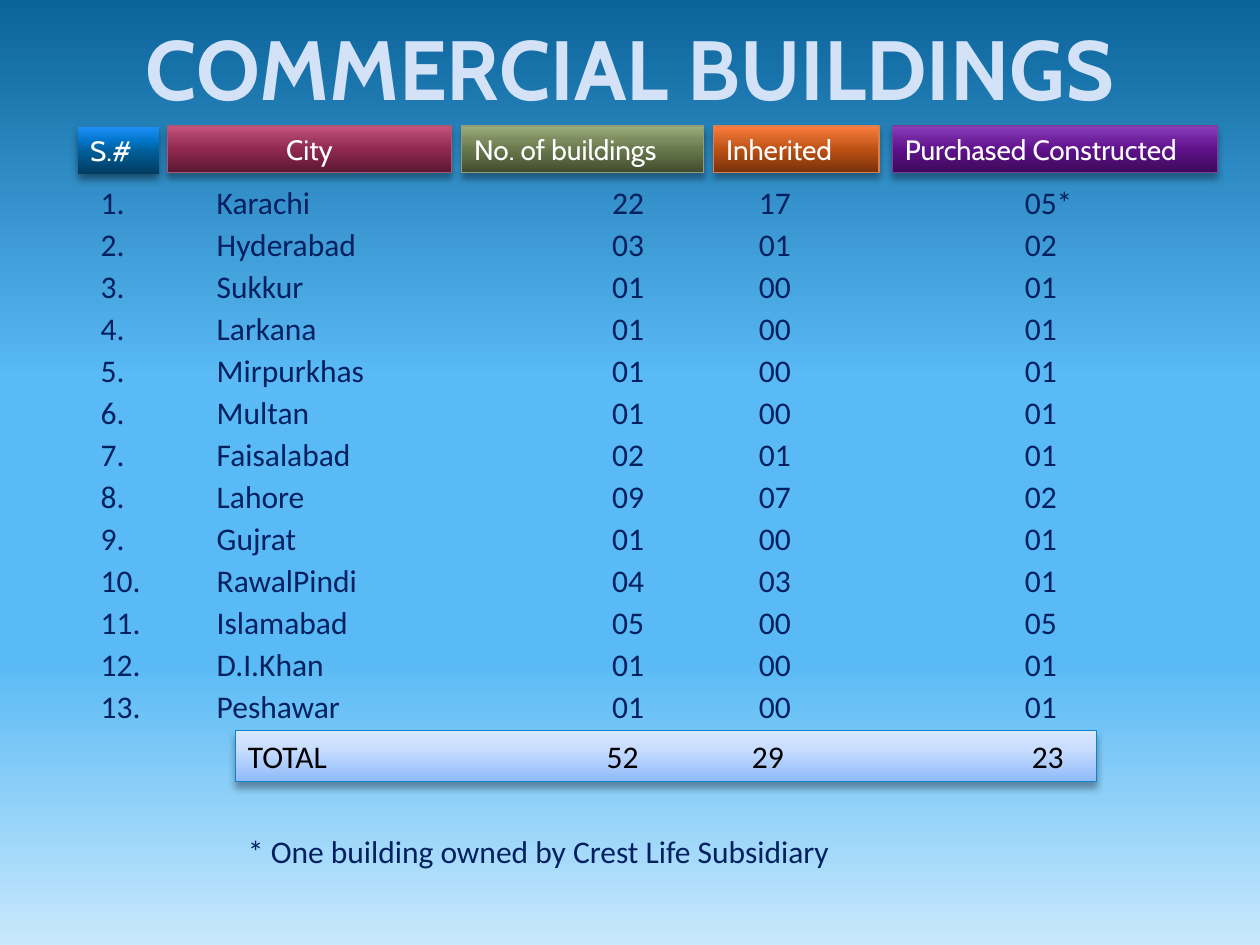
from lxml.etree import SubElement
from pptx import Presentation
from pptx.dml.color import RGBColor
from pptx.enum.shapes import MSO_SHAPE as Preset
from pptx.enum.text import MSO_ANCHOR as Anchor, MSO_AUTO_SIZE as AutoSize, PP_ALIGN as Align
from pptx.oxml.ns import qn
from pptx.util import Cm, Pt

COLORS = {"title": "D4E2F8", "row": "002060", "header": "FFFFFF", "total": "000000",
          "shadow": "000000", "total_line": "0D84CD"}

# Gradient stops run from top to bottom
BACKGROUND = [(0, "0A639A"), (40, "5ABAF5"), (70, "5ABAF5"), (100, "C8E8FC")]
TOTAL_FILL = [(0, "D9E7FF"), (35, "C9DEFF"), (100, "90BBF9")]
HEADER_STOPS = (0, 30, 50, 100)

# Text, left, top, width, alignment, line colour, shadow (opacity, blur), fill colours
HEADERS = [
    ("S.#", 1.57, 2.57, 1.63, Align.LEFT, None, (45, 5),
     ("1C8FF6", "0074C8", "005F9A", "003B60")),
    ("City", 3.38, 2.54, 5.72, Align.CENTER, "AD5778", (35, 4),
     ("C6537D", "A33961", "902850", "5B1731")),
    ("No. of buildings", 9.31, 2.54, 4.88, Align.LEFT, "919E7A", (35, 4),
     ("9BAD7B", "7C8C5F", "69794D", "414C2F")),
    ("Inherited", 14.39, 2.54, 3.33, Align.LEFT, "DA804E", (35, 4),
     ("FE7E3F", "D46326", "BD5114", "78310A")),
    ("Purchased Constructed", 17.99, 2.54, 6.55, Align.LEFT, "7D3DA1", (35, 4),
     ("8B3FBD", "6F229C", "5F128B", "3C0958")),
]
CITIES = [
    ("Karachi", "22", "17", "05*"),
    ("Hyderabad", "03", "01", "02"),
    ("Sukkur", "01", "00", "01"),
    ("Larkana", "01", "00", "01"),
    ("Mirpurkhas", "01", "00", "01"),
    ("Multan", "01", "00", "01"),
    ("Faisalabad", "02", "01", "01"),
    ("Lahore", "09", "07", "02"),
    ("Gujrat", "01", "00", "01"),
    ("RawalPindi", "04", "03", "01"),
    ("Islamabad", "05", "00", "05"),
    ("D.I.Khan", "01", "00", "01"),
    ("Peshawar", "01", "00", "01"),
]
TOTAL = ("TOTAL", "52", "29", "23")
FOOTNOTE = "* One building owned by Crest Life Subsidiary"

ROW_TABS = (2.34, 10.31, 13.27, 18.63)
TOTAL_TABS = (7.23, 10.16, 15.8)
FIRST_ROW, LAST_ROW = 3.56, 13.72


def paint_gradient(fill, element, stops):
    fill.gradient()
    fill.gradient_angle = 270
    stop_list = element.find(".//" + qn("a:gsLst"))
    for old in list(stop_list):
        stop_list.remove(old)
    for position, color in stops:
        stop = SubElement(stop_list, qn("a:gs"), pos=str(position * 1000))
        SubElement(stop, qn("a:srgbClr"), val=color)


def write(shape, text, size, font, color, align=Align.LEFT, tabs=(), bold=False):
    frame = shape.text_frame
    frame.word_wrap = True
    frame.auto_size = AutoSize.SHAPE_TO_FIT_TEXT
    frame.vertical_anchor = Anchor.TOP
    para = frame.paragraphs[0]
    para.alignment = align
    if tabs:
        tab_list = SubElement(para._p.get_or_add_pPr(), qn("a:tabLst"))
        for tab in tabs:
            SubElement(tab_list, qn("a:tab"), pos=str(Cm(tab)), algn="l")
    span = para.add_run()
    span.text = text
    span.font.size = Pt(size)
    span.font.name = font
    span.font.bold = bold
    span.font.color.rgb = RGBColor.from_string(color)
    return para


def add_bar(slide, left, top, width, height, stops, line, shadow):
    bar = slide.shapes.add_shape(Preset.RECTANGLE, Cm(left), Cm(top), Cm(width), Cm(height))
    paint_gradient(bar.fill, bar._element, stops)
    if line:
        bar.line.color.rgb = RGBColor.from_string(line)
        bar.line.width = Pt(0.75)
    else:
        bar.line.fill.background()
    bar.shadow.inherit = False
    opacity, blur = shadow
    effects = bar._element.spPr.find(qn("a:effectLst"))
    outer = SubElement(effects, qn("a:outerShdw"), blurRad=str(Pt(blur)), dist=str(Pt(3)),
                       dir="5400000", rotWithShape="0")
    shade = SubElement(outer, qn("a:srgbClr"), val=COLORS["shadow"])
    SubElement(shade, qn("a:alpha"), val=str(opacity * 1000))
    return bar


def add_line_of_text(slide, left, top, width, text, tabs=()):
    box = slide.shapes.add_textbox(Cm(left), Cm(top), Cm(width), Cm(1.02))
    write(box, text, 18, "Calibri", COLORS["row"], tabs=tabs)


def main():
    deck = Presentation()
    deck.slide_width, deck.slide_height = Cm(25.4), Cm(19.05)
    slide = deck.slides.add_slide(deck.slide_layouts[5])
    paint_gradient(slide.background.fill, slide._element, BACKGROUND)

    # Title
    title = slide.shapes.title
    title.left, title.top, title.width, title.height = Cm(0), Cm(0.43), Cm(25.4), Cm(2.11)
    para = write(title, "COMMERCIAL BUILDINGS", 48, "Cabin", COLORS["title"],
                 Align.CENTER, bold=True)
    para.line_spacing = 0.9

    # Column headers
    for text, left, top, width, align, line, shadow, colors in HEADERS:
        bar = add_bar(slide, left, top, width, 0.94, zip(HEADER_STOPS, colors), line, shadow)
        write(bar, text, 16, "Cabin", COLORS["header"], align)

    # One line per city, columns on tab stops
    pitch = (LAST_ROW - FIRST_ROW) / (len(CITIES) - 1)
    for index, city in enumerate(CITIES):
        text = "\t".join((f"{index + 1}.", *city))
        add_line_of_text(slide, 1.78, FIRST_ROW + index * pitch, 22, text, ROW_TABS)

    # Total and footnote
    total = add_bar(slide, 4.75, 14.73, 17.35, 1.02, TOTAL_FILL, COLORS["total_line"], (35, 4))
    write(total, "\t".join(TOTAL), 18, "Calibri", COLORS["total"], tabs=TOTAL_TABS)
    add_line_of_text(slide, 4.75, 16.64, 13.97, FOOTNOTE)

    deck.save("out.pptx")


if __name__ == "__main__":
    main()
